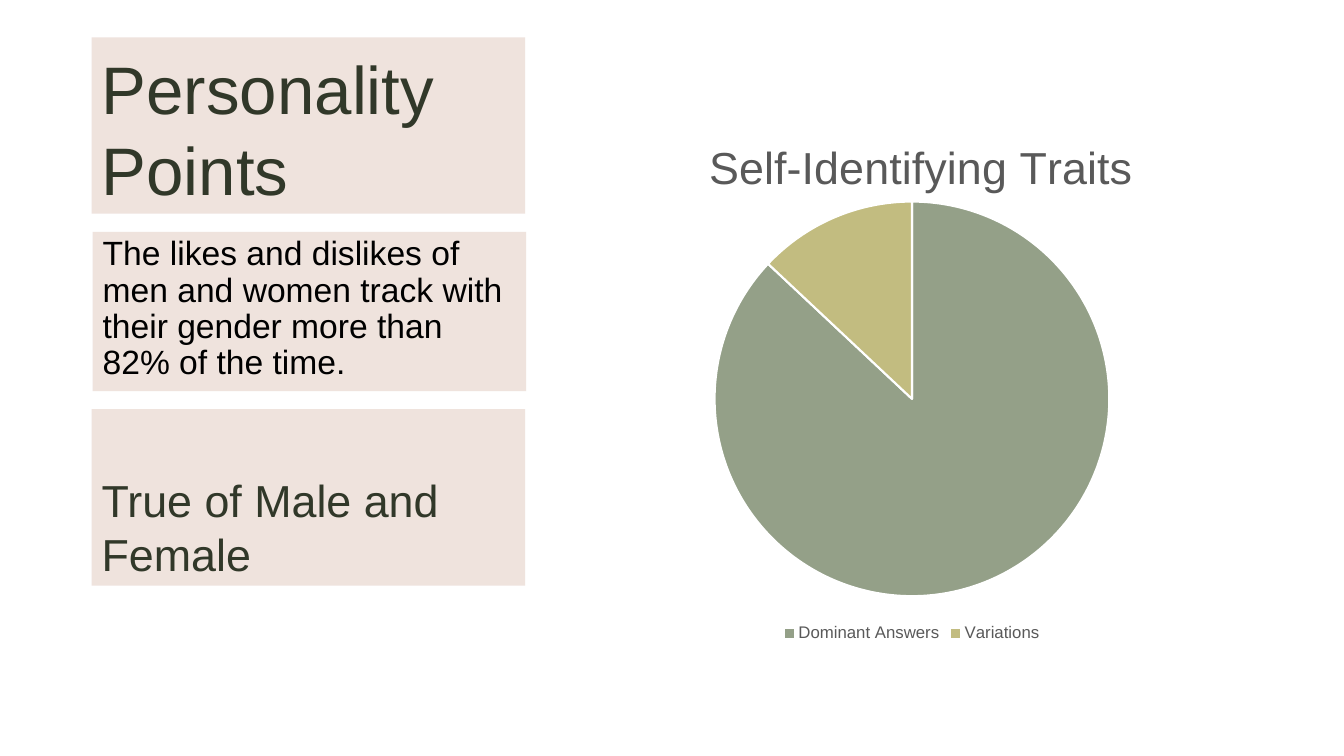
from lxml import etree
from pptx import Presentation
from pptx.chart.data import CategoryChartData as ChartData
from pptx.dml.color import RGBColor
from pptx.enum.chart import XL_CHART_TYPE as Kind, XL_LEGEND_POSITION as Place
from pptx.enum.shapes import MSO_SHAPE as Form
from pptx.enum.text import MSO_ANCHOR as Anchor, MSO_AUTO_SIZE as Fit, PP_ALIGN as Align
from pptx.oxml import parse_xml
from pptx.oxml.ns import nsdecls, qn
from pptx.util import Inches, Pt


def color(code):
    return RGBColor.from_string(code)


def layout(inner="", **spots):
    modes = "".join(f'<c:{k}Mode val="edge"/>' for k in "xy")
    vals = "".join(f'<c:{k} val="{v}"/>' for k, v in spots.items())
    return parse_xml(f'<c:layout {nsdecls("c")}><c:manualLayout>{inner}{modes}{vals}'
                     '</c:manualLayout></c:layout>')


class Deck:
    face = "Arial"
    panel = "EBDCD5"
    dark = "313829"
    gray = "595959"

    def __init__(self):
        self.prs = Presentation()
        self.prs.slide_width = Inches(13.33)
        self.prs.slide_height = Inches(7.5)
        self.slide = self.prs.slides.add_slide(self.prs.slide_layouts[5])

    def font(self, font, size, code):
        font.name = self.face
        font.size = Pt(size)
        font.bold = False
        font.color.rgb = color(code)

    def dress(self, shape, box, text, size, code, anchor, gap):
        shape.left, shape.top, shape.width, shape.height = map(Inches, box)
        shape.fill.solid()
        shape.fill.fore_color.rgb = color(self.panel)
        tint = shape._element.spPr.find(".//" + qn("a:srgbClr"))
        etree.SubElement(tint, qn("a:alpha")).set("val", "80000")
        shape.line.fill.background()
        frame = shape.text_frame
        frame.text = text
        frame.word_wrap = True
        frame.auto_size = Fit.NONE
        frame.vertical_anchor = anchor
        para = frame.paragraphs[0]
        para.alignment = Align.LEFT
        para.line_spacing = gap
        self.font(para.font, size, code)

    def title(self, box, text, size):
        self.dress(self.slide.shapes.title, box, text, size, self.dark, Anchor.BOTTOM, 1.0)

    def card(self, box, text, size, code, anchor, gap):
        shape = self.slide.shapes.add_shape(Form.RECTANGLE, *map(Inches, box))
        shape.shadow.inherit = False
        self.dress(shape, box, text, size, code, anchor, gap)

    def pie(self, box, title, parts):
        data = ChartData()
        data.categories = [name for name, _, _ in parts]
        data.add_series("Series 1", [val for _, val, _ in parts])
        chart = self.slide.shapes.add_chart(Kind.PIE, *map(Inches, box), data).chart
        self.font(chart.font, 10, "000000")
        chart.has_title = True
        head = chart.chart_title
        head.include_in_layout = False
        head.text_frame.text = title
        self.font(head.text_frame.paragraphs[0].font, 32, self.gray)
        mark = head._element.find(qn("c:layout"))
        if mark is not None:
            head._element.remove(mark)
        head._element.find(qn("c:tx")).addnext(layout(x=0.19, y=0.04))
        chart.has_legend = True
        chart.legend.position = Place.BOTTOM
        chart.legend.include_in_layout = False
        self.font(chart.legend.font, 12, self.gray)
        plot = chart.plots[0]
        plot.vary_by_categories = True
        for i, (_, _, code) in enumerate(parts):
            style = plot.series[0].points[i].format
            style.fill.solid()
            style.fill.fore_color.rgb = color(code)
            style.line.color.rgb = color("FFFFFF")
            style.line.width = Pt(1.5)
        area = plot._element.getparent()
        mark = area.find(qn("c:layout"))
        if mark is not None:
            area.remove(mark)
        area.insert(0, layout('<c:layoutTarget val="inner"/>', x=0.21, y=0.17, w=0.58, h=0.74))


def main():
    deck = Deck()
    deck.title((0.91, 0.37, 4.3, 1.75), "Personality\vPoints", 48)
    deck.pie((5.67, 1.08, 6.75, 5.33), "Self-Identifying Traits",
             [("Dominant Answers", 87, "94A088"), ("Variations", 13, "C2BC80")])
    deck.card((0.92, 2.3, 4.3, 1.58),
              "The likes and dislikes of men and women track with their gender "
              "more than 82% of the time.", 24, "000000", Anchor.TOP, 0.9)
    deck.card((0.91, 4.06, 4.3, 1.75), "True of Male and Female", 32,
              deck.dark, Anchor.BOTTOM, 1.0)
    deck.prs.save("out.pptx")


if __name__ == "__main__":
    main()
